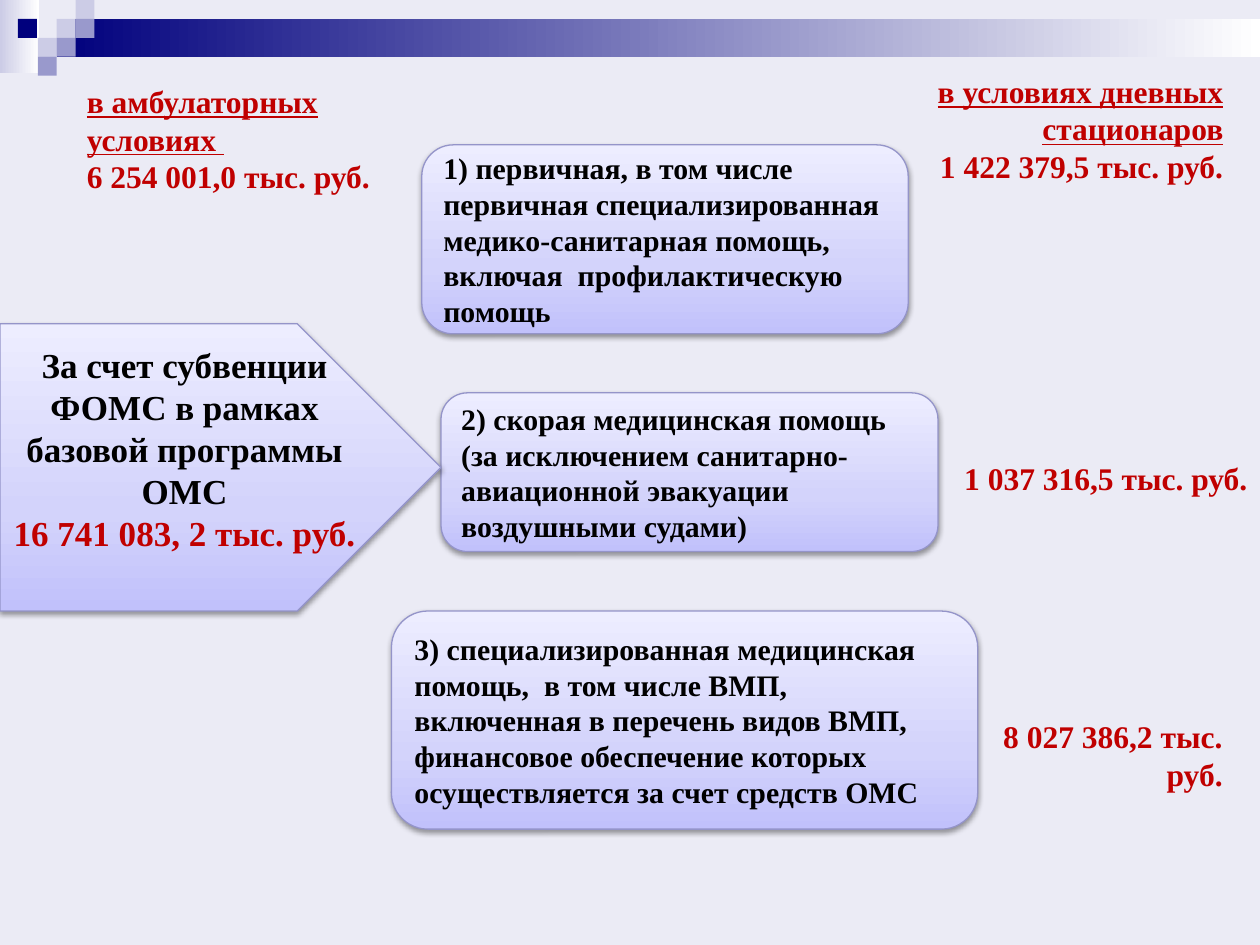
"""Builds a slide on how the medical insurance subsidy is shared out."""
from copy import deepcopy

from pptx import Presentation
from pptx.dml.color import RGBColor
from pptx.enum import shapes, text
from pptx.oxml import ns, parse_xml
from pptx.util import Pt

BACK = RGBColor(0xEB, 0xEB, 0xF5)
NAVY = RGBColor(0x00, 0x00, 0x7D)
PALE = RGBColor(0xCC, 0xCC, 0xE6)
MID = RGBColor(0x99, 0x99, 0xCC)
WHITE = RGBColor(0xFF, 0xFF, 0xFF)
BLACK = RGBColor(0x00, 0x00, 0x00)
RED = RGBColor(0xC0, 0x00, 0x00)
EDGE = RGBColor(0x94, 0x94, 0xC9)
GLOW = [(0, RGBColor(0xC1, 0xC1, 0xFB)), (0.35, RGBColor(0xD3, 0xD3, 0xFB)),
        (1, RGBColor(0xED, 0xED, 0xFF))]
KIND = shapes.MSO_SHAPE
ALIGN = text.PP_ALIGN
CELL = 10.8
SHADE = (f'<a:outerShdw {ns.nsdecls("a")} blurRad="{Pt(3.1)}" dist="{Pt(1.6)}" '
         'dir="5400000" rotWithShape="0"><a:srgbClr val="000000">'
         '<a:alpha val="38000"/></a:srgbClr></a:outerShdw>')


class Deck:
    """Holds the style and the current slide."""

    def __init__(self, font):
        self.font = font
        self.file = Presentation()
        self.file.slide_width, self.file.slide_height = Pt(720), Pt(540)
        self.slide = self.file.slides.add_slide(self.file.slide_layouts[6])
        fill = self.slide.background.fill
        fill.solid()
        fill.fore_color.rgb = BACK

    def shape(self, kind, area):
        item = self.slide.shapes.add_shape(kind, *map(Pt, area))
        item.shadow.inherit = False
        item.line.fill.background()
        return item

    def blend(self, item, stops, angle):
        item.fill.gradient()
        item.fill.gradient_angle = angle
        first = item.element.spPr.find(".//" + ns.qn("a:gs"))
        for _ in stops[2:]:
            first.addnext(deepcopy(first))
        for stop, (place, color) in zip(item.fill.gradient_stops, stops):
            stop.position = place
            stop.color.rgb = color

    def block(self, area, color):
        item = self.shape(KIND.RECTANGLE, area)
        item.fill.solid()
        item.fill.fore_color.rgb = color

    def band(self, area, color):
        item = self.shape(KIND.RECTANGLE, area)
        self.blend(item, [(0, color), (1, WHITE)], 0)

    def words(self, frame, paras, size, align):
        frame.word_wrap = True
        for num, runs in enumerate(paras):
            para = frame.add_paragraph() if num else frame.paragraphs[0]
            para.alignment = align
            for line, color, under in runs:
                run = para.add_run()
                run.text = line
                run.font.name = self.font
                run.font.size = Pt(size)
                run.font.bold = True
                run.font.underline = under
                run.font.color.rgb = color

    def card(self, kind, area, paras, size, align, base=3.6):
        item = self.shape(kind, area)
        self.blend(item, GLOW, 90)
        item.line.color.rgb = EDGE
        item.line.width = Pt(0.75)
        item.element.spPr.find(ns.qn("a:effectLst")).append(parse_xml(SHADE))
        frame = item.text_frame
        frame.vertical_anchor = text.MSO_ANCHOR.MIDDLE
        frame.margin_bottom = Pt(base)
        self.words(frame, paras, size, align)

    def label(self, area, head, total, align):
        item = self.slide.shapes.add_textbox(*map(Pt, area))
        paras = [[(head, RED, True)]] if head else []
        self.words(item.text_frame, paras + [[(total, RED, False)]], 18, align)
        item.text_frame.auto_size = text.MSO_AUTO_SIZE.SHAPE_TO_FIT_TEXT


def main():
    deck = Deck("Times New Roman")
    deck.band((0, 0, 22.3, 41.8), PALE)
    deck.band((3 * CELL, CELL, 720 - 3 * CELL, 2 * CELL), NAVY)
    for col, row, color in [(3, 1, PALE), (4, 0, PALE), (4, 1, MID), (2, 2, PALE),
                            (0.95, 1, NAVY), (3, 2, MID), (2, 3, MID)]:
        deck.block((col * CELL, row * CELL, CELL, CELL), color)

    cards = [
        ((241, 82.8, 278, 108),
         ["1) первичная, в том числе первичная специализированная "
          "медико-санитарная помощь, включая  профилактическую помощь"]),
        ((252, 224.5, 284, 90.7),
         ["2) скорая медицинская помощь ",
          "(за исключением санитарно-авиационной эвакуации воздушными судами)"]),
        ((223.7, 349.2, 335, 124.6),
         ["3) специализированная медицинская помощь,  в том числе ВМП, "
          "включенная в перечень видов ВМП, финансовое обеспечение которых "
          "осуществляется за счет средств ОМС"]),
    ]
    for area, lines in cards:
        paras = [[(line, BLACK, False)] for line in lines]
        deck.card(KIND.ROUNDED_RECTANGLE, area, paras, 17, ALIGN.LEFT)

    source = [[("За счет субвенции ФОМС в рамках базовой программы ОМС", BLACK, False)],
              [("16 741 083, 2 тыс. руб.", RED, False)]]
    deck.card(KIND.PENTAGON, (0, 185, 252, 164.2), source, 20, ALIGN.CENTER, 25)

    deck.label((42.5, 43.2, 193, 72.7), "в амбулаторных условиях ",
               "6 254 001,0 тыс. руб.", ALIGN.LEFT)
    deck.label((535.7, 258.5, 184.3, 29), "", "1 037 316,5 тыс. руб.", ALIGN.RIGHT)
    deck.label((541.5, 406, 164.2, 51), "", "8 027 386,2 тыс. руб.", ALIGN.RIGHT)
    deck.label((507.6, 37.4, 198.5, 72.7), "в условиях дневных стационаров",
               "1 422 379,5 тыс. руб.", ALIGN.RIGHT)
    deck.file.save("out.pptx")


if __name__ == "__main__":
    main()
